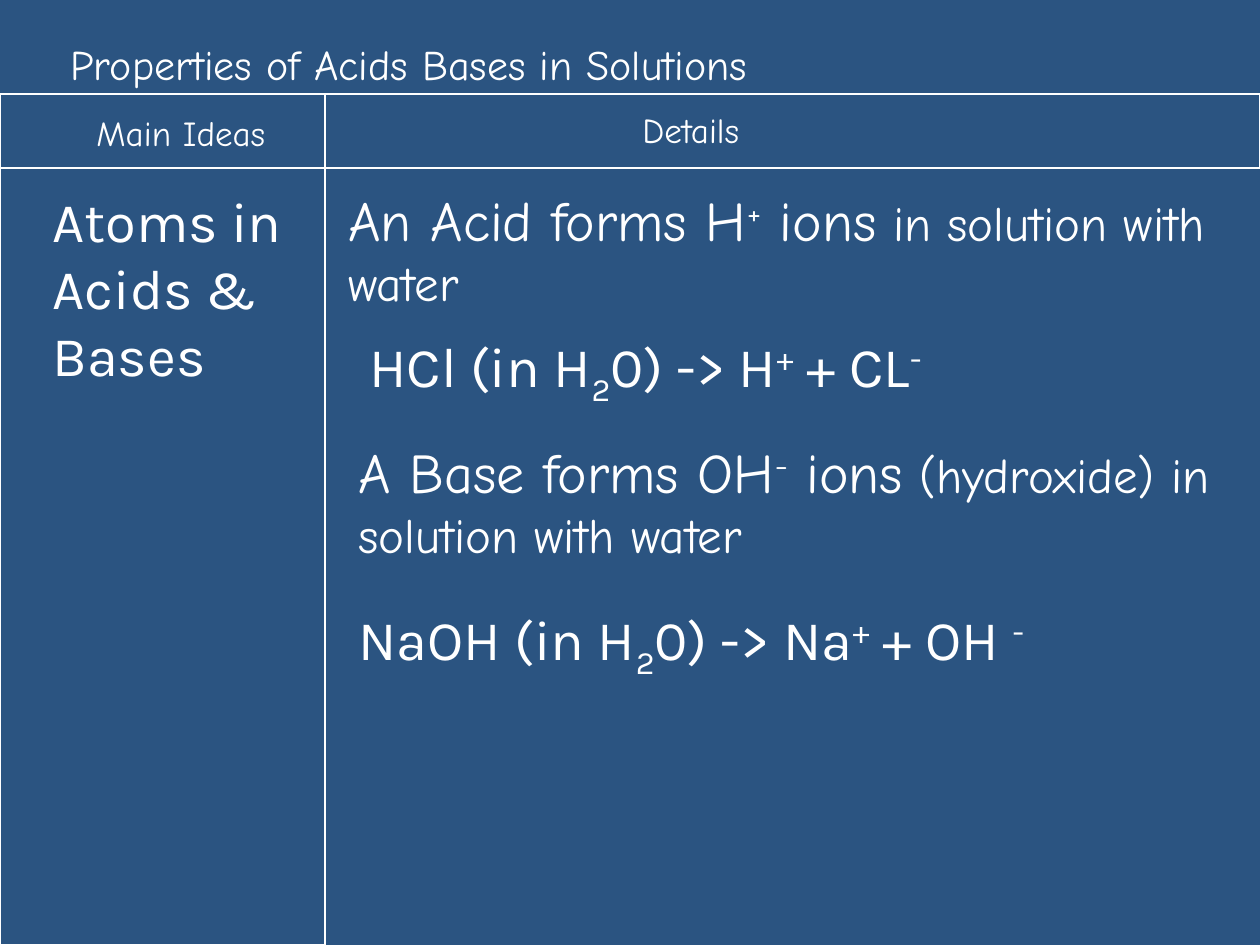
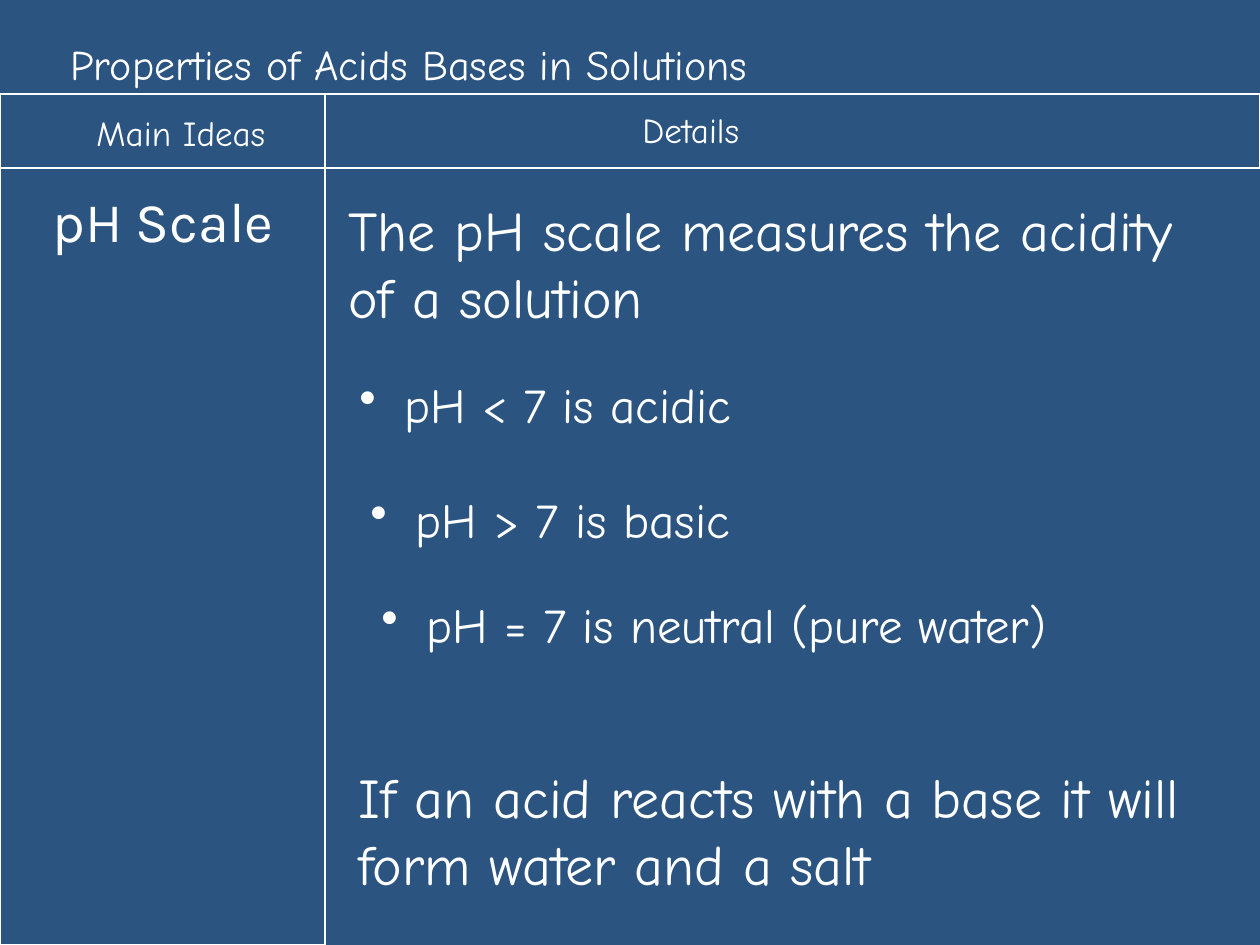
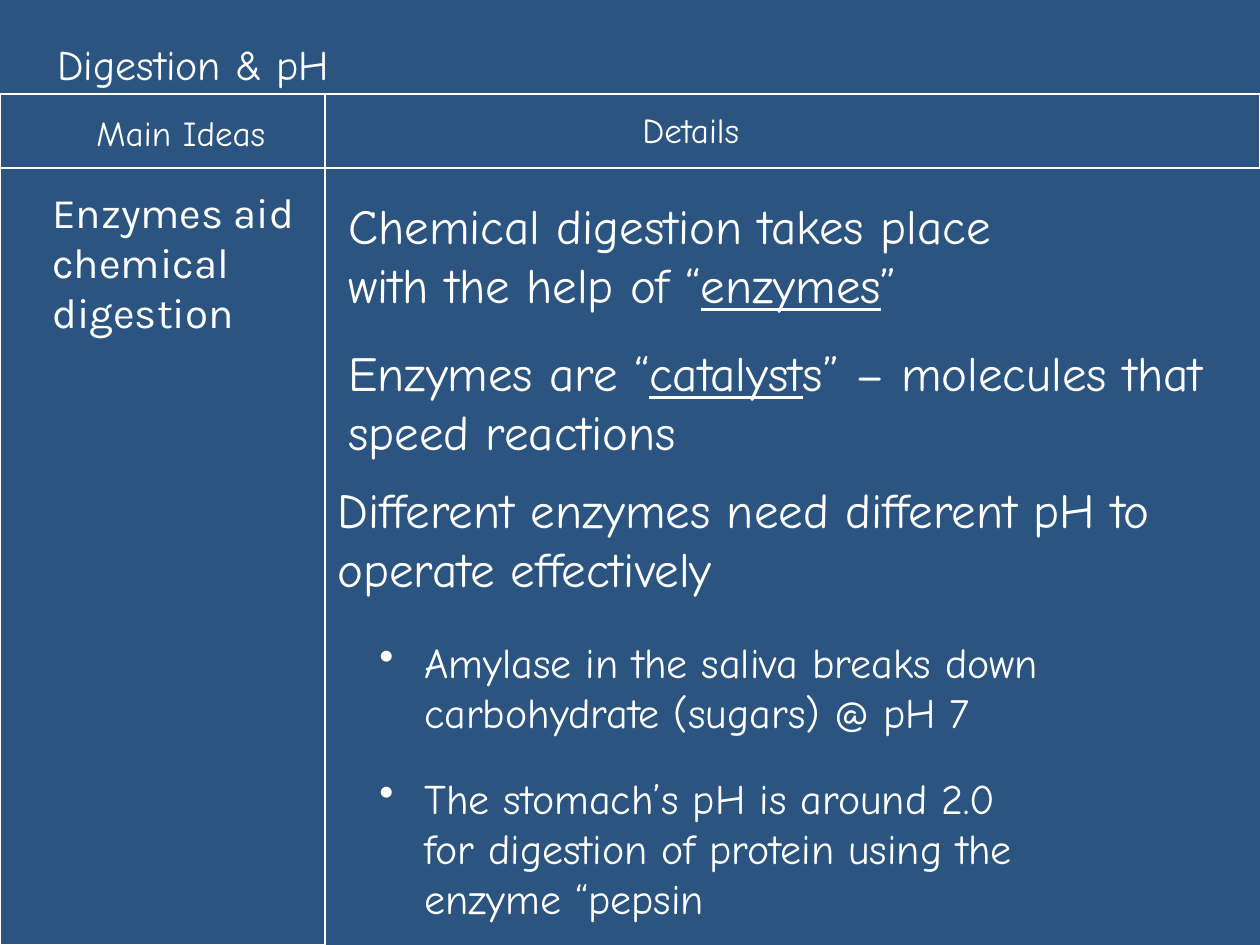
"""Build three two-column note slides on acids, bases and digestion."""
from lxml import etree
from pptx import Presentation
from pptx import util as u
from pptx.dml.color import RGBColor
from pptx.enum import shapes, text
from pptx.oxml import ns

PX = 914400 / 126
WIDTH, HEIGHT = 1260, 945
NAVY, WHITE = "2B5481", "FFFFFF"
HAND, PLAIN = "Comic Neue", "Karla"
HEAD_TOP, BODY_TOP, SPLIT = 94, 168, 325
HANG = 45
BASELINES = {"sup": "30000", "sub": "-25000"}

MAIN_IDEA = (40, 180, 275)
PROPERTIES = ("Properties of Acids Bases in Solutions", 26)

PAGES = [
    {
        "title": PROPERTIES,
        "idea": (32, ["Atoms in", "Acids & Bases"]),
        "details": [
            ((336, 179, 892), HAND, 32, 0,
             [("An Acid forms H",), ("+", "sup"), (" ions",),
              (" in solution with water", "", 28)]),
            ((346, 431, 892), HAND, 32, 0,
             [("A Base forms OH",), ("-", "sup"), (" ions",),
              (" (hydroxide) in solution with water", "", 28)]),
            ((357, 325, 822), PLAIN, 32, 0,
             [("HCl (in H",), ("2", "sub"), ("0) -> H",), ("+", "sup"),
              (" + CL",), ("-", "sup")]),
            ((346, 598, 822), PLAIN, 32, 0,
             [("NaOH (in H",), ("2", "sub"), ("0) -> Na",), ("+", "sup"),
              (" + OH ",), ("-", "sup")]),
        ],
    },
    {
        "title": PROPERTIES,
        "idea": (32, ["pH Scale"]),
        "details": [
            ((336, 189, 892), HAND, 32, 0,
             [("The pH scale measures the acidity of a solution",)]),
            ((346, 368, 892), HAND, 28, 46, [("pH < 7 is acidic",)]),
            ((357, 483, 724), HAND, 28, 46, [("pH > 7 is basic",)]),
            ((368, 588, 724), HAND, 28, 46,
             [("pH = 7 is neutral (pure water)",)]),
            ((346, 756, 882), HAND, 32, 0,
             [("If an acid reacts with a base it will form water and a salt",)]),
        ],
    },
    {
        "title": ("Digestion & pH", 13),
        "idea": (24, ["Enzymes aid chemical digestion"]),
        "details": [
            ((336, 189, 724), HAND, 28, 0,
             [("Chemical digestion takes place with the help of “",),
              ("enzymes", "under"), ("”",)]),
            ((336, 336, 892), HAND, 28, 0,
             [("Enzymes are “",), ("catalyst", "under"),
              ("s” – molecules that speed reactions",)]),
            ((325, 473, 892), HAND, 28, 0,
             [("Different enzymes need different pH to operate effectively",)]),
            ((336, 630, 892), HAND, 24, 76,
             [("Amylase in the saliva breaks down carbohydrate (sugars) @ pH 7",)]),
            ((336, 766, 724), HAND, 24, 76,
             [("The stomach’s pH is around 2.0 for digestion of protein "
               "using the enzyme “pepsin",)]),
        ],
    },
]


def emu(px):
    return round(px * PX)


def color(value):
    return RGBColor.from_string(value)


def add_span(para, font_name, size, words, style="", own_size=None):
    span = para.add_run()
    span.text = words
    span.font.name = font_name
    span.font.size = u.Pt(own_size or size)
    span.font.color.rgb = color(WHITE)
    if style == "under":
        span.font.underline = True
    elif style:
        span._r.get_or_add_rPr().set("baseline", BASELINES[style])


def add_text(page, place, font_name, size, paragraphs, margin=0, bullet=False):
    left, top, width = place
    lines_height = round(size * 1.2 * 126 / 72) * len(paragraphs) + 13
    box = page.shapes.add_textbox(*map(emu, (left, top, width, lines_height)))
    frame = box.text_frame
    frame.word_wrap = True
    frame.auto_size = text.MSO_AUTO_SIZE.SHAPE_TO_FIT_TEXT
    for index, spans in enumerate(paragraphs):
        para = frame.add_paragraph() if index else frame.paragraphs[0]
        settings = para._p.get_or_add_pPr()
        settings.set("marL", str(emu(margin)))
        settings.set("indent", str(emu(-HANG if bullet else 0)))
        if bullet:
            etree.SubElement(settings, ns.qn("a:buChar")).set("char", "•")
        for span in spans:
            add_span(para, font_name, size, *span)


def outline(line):
    line.color.rgb = color(WHITE)
    line.width = u.Pt(0.75)


def add_frame(page):
    add_text(page, (84, 105, 207), HAND, 20, [[("Main Ideas",)]])
    add_text(page, (630, 102, 141), HAND, 20, [[("Details",)]])
    for bounds in ((0, HEAD_TOP, WIDTH, BODY_TOP - HEAD_TOP),
                   (0, BODY_TOP, SPLIT, HEIGHT - BODY_TOP)):
        panel = page.shapes.add_shape(shapes.MSO_SHAPE.RECTANGLE, *map(emu, bounds))
        panel.shadow.inherit = False
        panel.fill.background()
        outline(panel.line)
    divider = page.shapes.add_connector(
        shapes.MSO_CONNECTOR.STRAIGHT,
        *map(emu, (SPLIT, BODY_TOP, SPLIT, HEAD_TOP)))
    etree.SubElement(divider._element.spPr, ns.qn("a:effectLst"))
    outline(divider.line)


def main():
    deck = Presentation()
    deck.slide_width, deck.slide_height = emu(WIDTH), emu(HEIGHT)
    background = deck.slide_master.background.fill
    background.solid()
    background.fore_color.rgb = color(NAVY)
    for content in PAGES:
        page = deck.slides.add_slide(deck.slide_layouts[6])
        title, title_margin = content["title"]
        add_text(page, (32, 32, 1228), HAND, 24, [[(title,)]], title_margin)
        add_frame(page)
        idea_size, idea_lines = content["idea"]
        add_text(page, MAIN_IDEA, PLAIN, idea_size, [[(line,)] for line in idea_lines])
        for place, font_name, size, margin, spans in content["details"]:
            add_text(page, place, font_name, size, [spans], margin, margin > 0)
    deck.save("out.pptx")


if __name__ == "__main__":
    main()
